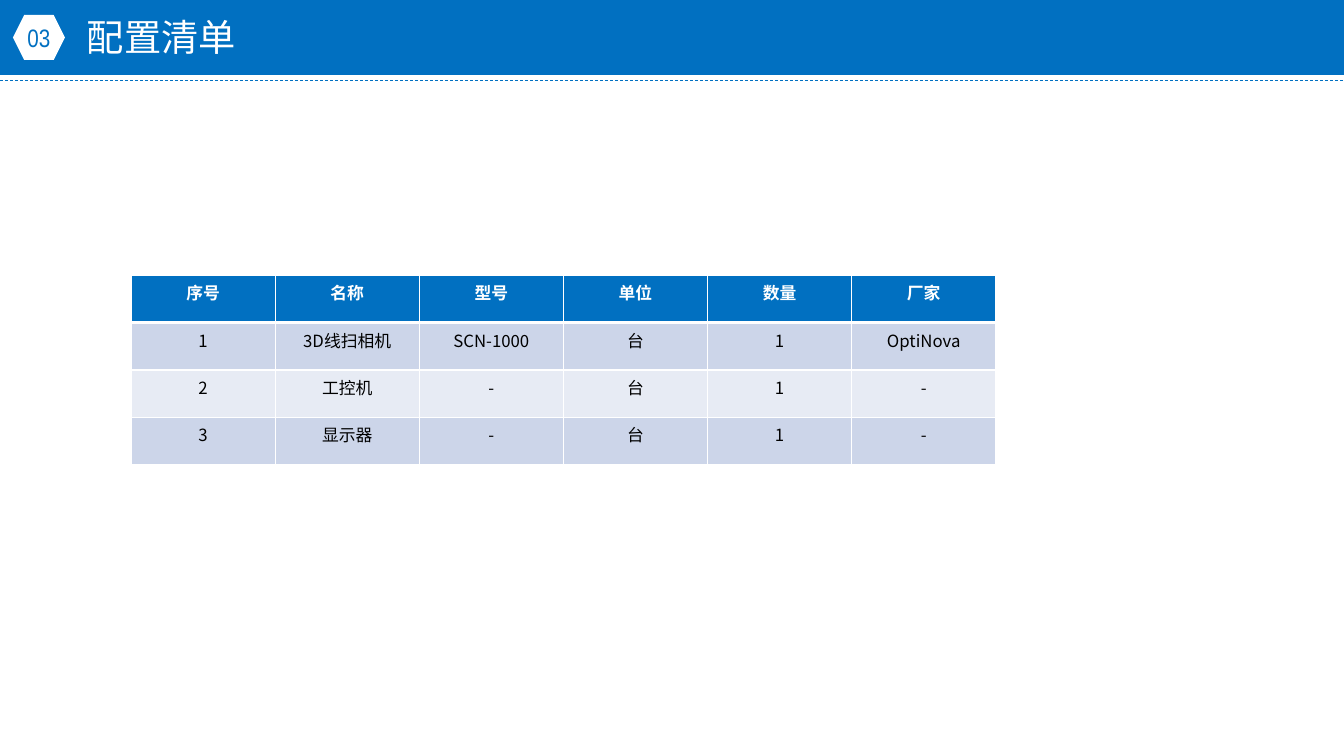
from pptx import Presentation
from pptx.dml.color import RGBColor
from pptx.enum.dml import MSO_LINE
from pptx.enum.shapes import MSO_CONNECTOR, MSO_SHAPE
from pptx.enum.text import MSO_ANCHOR, MSO_AUTO_SIZE, PP_ALIGN
from pptx.oxml.ns import qn
from pptx.util import Pt
from lxml import etree

RECT, HEX = MSO_SHAPE.RECTANGLE, MSO_SHAPE.HEXAGON
STRAIGHT, DASH = MSO_CONNECTOR.STRAIGHT, MSO_LINE.DASH
LEFT, CENTER = PP_ALIGN.LEFT, PP_ALIGN.CENTER
MIDDLE, GROW = MSO_ANCHOR.MIDDLE, MSO_AUTO_SIZE.SHAPE_TO_FIT_TEXT

BLUE = RGBColor(0x01, 0x70, 0xC1)
WHITE = RGBColor(0xFF, 0xFF, 0xFF)
BLACK = RGBColor(0, 0, 0)
DARK = RGBColor(0xCC, 0xD5, 0xE9)
LIGHT = RGBColor(0xE7, 0xEB, 0xF4)

SANS, NARROW = "Noto Sans CJK SC", "Arial Narrow"
WIDE, HIGH = 1344, 756
ROWS = [
    ["序号", "名称", "型号", "单位", "数量", "厂家"],
    ["1", "3D线扫相机", "SCN-1000", "台", "1", "OptiNova"],
    ["2", "工控机", "-", "台", "1", "-"],
    ["3", "显示器", "-", "台", "1", "-"],
]


def px(num):
    """Turn pixels into EMU."""
    return round(num * 914400 / 100.8)


def write(frame, text, size, color, face=SANS, bold=False, align=CENTER):
    """Put one formatted line into a text frame."""
    para = frame.paragraphs[0]
    para.alignment = align
    run = para.add_run()
    run.text = text
    font = run.font
    font.size, font.bold, font.name = Pt(size), bold, face
    font.color.rgb = color
    east = etree.Element(qn("a:ea"), typeface=face)
    run._r.get_or_add_rPr().find(qn("a:latin")).addnext(east)


def block(slide, kind, box, color):
    """Add a plain filled shape."""
    shape = slide.shapes.add_shape(kind, *map(px, box))
    shape.shadow.inherit = False
    shape.fill.solid()
    shape.fill.fore_color.rgb = color
    shape.line.fill.background()
    return shape


def banner(slide, x, y, w, h):
    """Draw the title bar, its number badge and the dashed rule."""
    block(slide, RECT, (x, y, w, h), BLUE)
    low = px(y + h + 5)
    rule = slide.shapes.add_connector(STRAIGHT, px(x), low, px(x + w), low)
    rule.line.color.rgb = BLUE
    rule.line.width = Pt(0.5)
    rule.line.dash_style = DASH
    etree.SubElement(rule._element.spPr, qn("a:effectLst"))

    badge = block(slide, HEX, (x + 13, y + 15, 52, 45), WHITE).text_frame
    badge.margin_left = badge.margin_right = 0
    badge.margin_top = badge.margin_bottom = 0
    badge.vertical_anchor = MIDDLE
    write(badge, "03", 18, BLUE, face=NARROW)

    box = (x + 77, y + 9, 169, 55)
    title = slide.shapes.add_textbox(*map(px, box)).text_frame
    title.word_wrap = False
    title.auto_size = GROW
    write(title, "配置清单", 26.6, WHITE, align=LEFT)


def edge(cell, side, width):
    """Add one white border to a cell."""
    line = etree.SubElement(cell._tc.get_or_add_tcPr(), qn("a:ln" + side),
                            w=str(Pt(width)))
    fill = etree.SubElement(line, qn("a:solidFill"))
    etree.SubElement(fill, qn("a:srgbClr"), val=str(WHITE))


def grid(slide, x, y, w, h):
    """Draw the parts table with equal rows and columns."""
    rows, cols = len(ROWS), len(ROWS[0])
    table = slide.shapes.add_table(rows, cols, *map(px, (x, y, w, h))).table
    for col in table.columns:
        col.width = px(w / cols)
    for r, texts in enumerate(ROWS):
        table.rows[r].height = px(h / rows)
        head = r == 0
        back = BLUE if head else DARK if r % 2 else LIGHT
        for c, text in enumerate(texts):
            cell = table.cell(r, c)
            for side in "LRTB":
                edge(cell, side, 3 if head and side == "B" else 1)
            cell.fill.solid()
            cell.fill.fore_color.rgb = back
            write(cell.text_frame, text, 12, WHITE if head else BLACK,
                  bold=head)


def main():
    """Build and save the slide."""
    deck = Presentation()
    deck.slide_width, deck.slide_height = px(WIDE), px(HIGH)
    slide = deck.slides.add_slide(deck.slide_layouts[6])
    banner(slide, 0, 0, WIDE, 75)
    grid(slide, 131, 275, 865, 190)
    deck.save("out.pptx")


if __name__ == "__main__":
    main()
